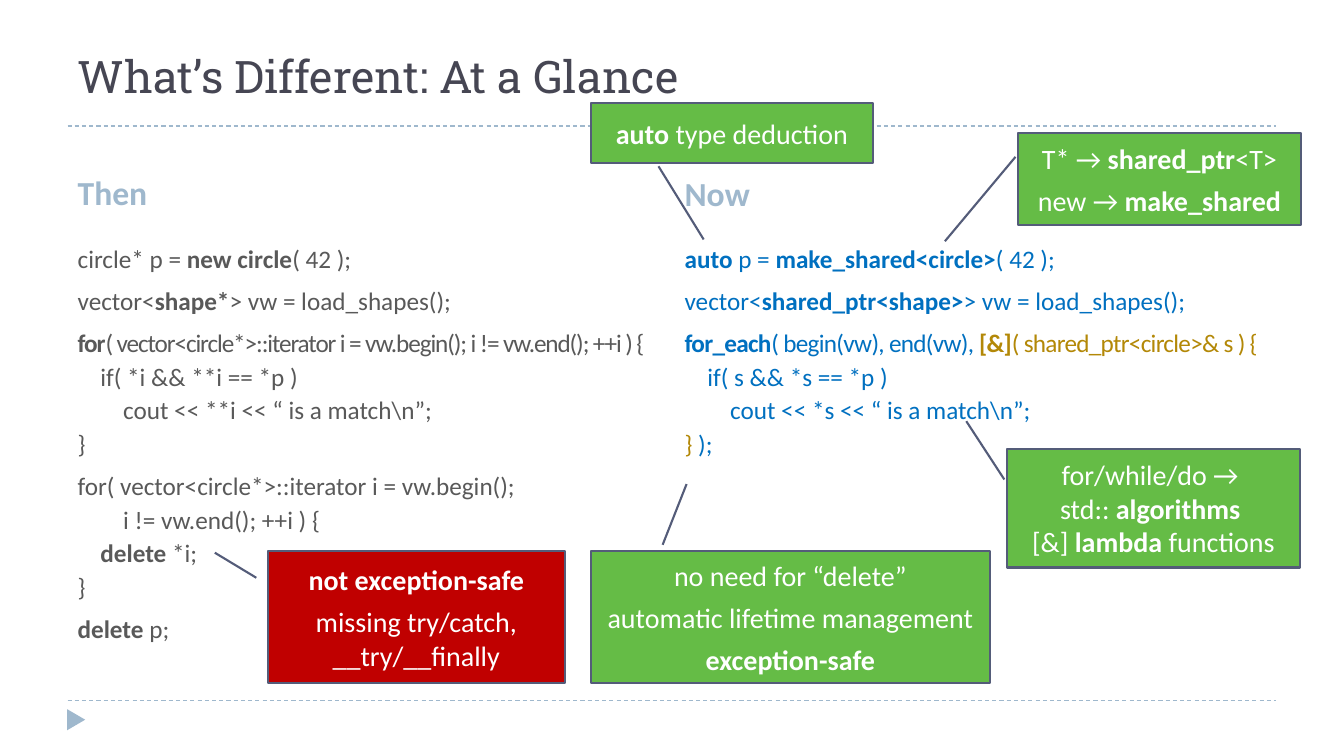
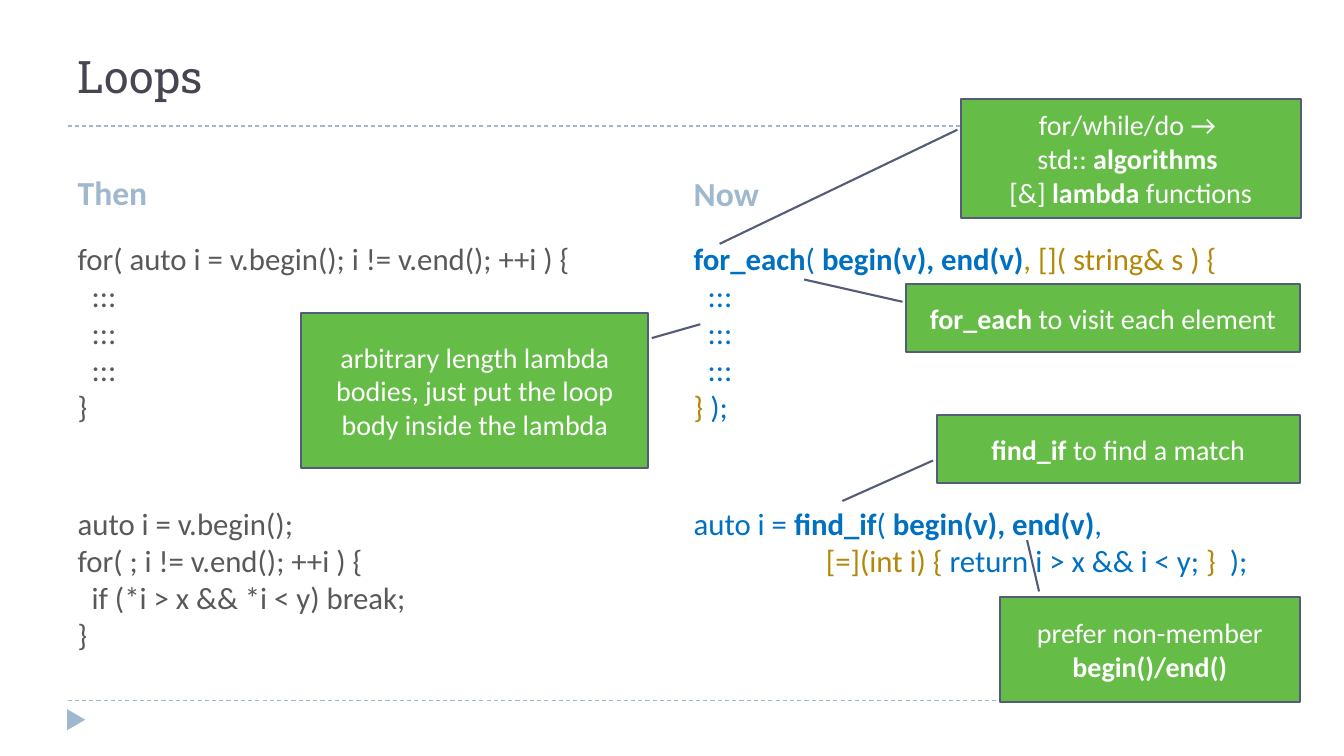
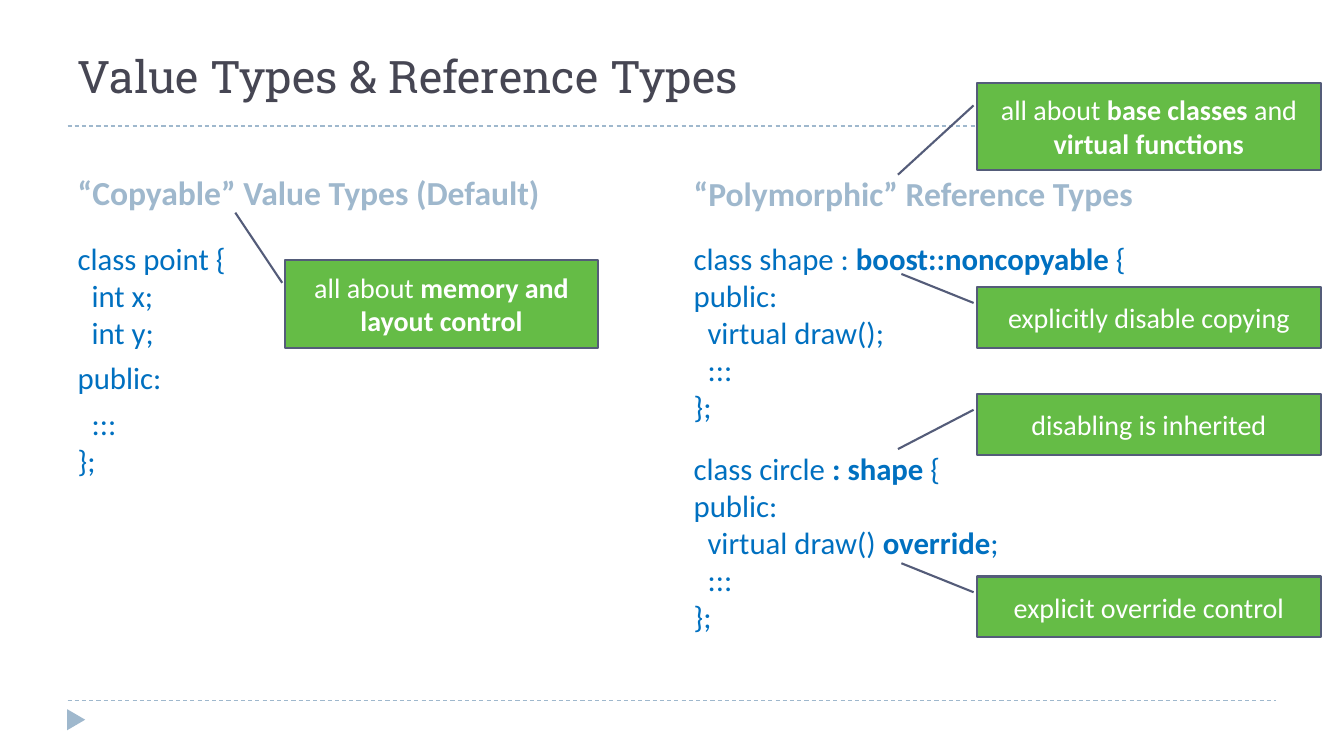
from dataclasses import dataclass

from lxml import etree
from pptx import Presentation
from pptx import util as u
from pptx.dml.color import RGBColor
from pptx.enum import dml, shapes, text


# Theme: colours, fonts and type sizes
@dataclass(frozen=True)
class Theme:
    title: str = "464653"
    pale: str = "9FB8CD"
    gray: str = "595959"
    blue: str = "0070C0"
    gold: str = "B38807"
    green: str = "65BC46"
    red: str = "C00000"
    edge: str = "545C79"
    white: str = "FFFFFF"
    head: str = "Roboto Slab"
    body: str = "Calibri"
    big: int = 32
    mid: int = 24
    code: int = 22
    note: int = 20
    small: int = 18


T = Theme()
A = "http://schemas.openxmlformats.org/drawingml/2006/main"
SPACE = 0.226  # width of a space, in ems
LEFT, RIGHT, WIDE = 0.67, 6.78, 5.89


# Runs and rows of text
@dataclass(frozen=True)
class Run:
    text: str
    bold: bool = False
    ink: str = ""


@dataclass(frozen=True)
class Row:
    runs: tuple
    gap: float
    pad: int
    spc: int


def row(*runs, gap=0, pad=0, spc=0):
    """One line of text; pad counts spaces of indent."""
    return Row(runs, gap, pad, spc)


def para(*runs, **more):
    return row(*runs, gap=6, **more)


def b(words):
    return Run(words, bold=True)


def gold(words, bold=False):
    return Run(words, bold, T.gold)


def rgb(code):
    return RGBColor.from_string(code)


def place(shape, box):
    shape.left, shape.top, shape.width, shape.height = map(u.Inches, box)


def fill(frame, rows, size, ink, align=None, lead=None):
    frame.word_wrap = True
    for i, line in enumerate(rows):
        p = frame.add_paragraph() if i else frame.paragraphs[0]
        p.alignment = align
        p.space_before = u.Pt(line.gap)
        if lead:
            p.line_spacing = u.Pt(lead)
        if line.pad:
            p._p.get_or_add_pPr().set(
                "marL", str(u.Pt(line.pad * size * SPACE)))
        for part in line.runs:
            part = Run(part) if isinstance(part, str) else part
            r = p.add_run()
            r.text = part.text
            r.font.name, r.font.size = T.body, u.Pt(size)
            r.font.bold = part.bold
            r.font.color.rgb = rgb(part.ink or ink)
            if line.spc:
                r.font._element.set("spc", str(line.spc))


# Shared layout: placeholders, rules and corner mark
def style(holder, box, anchor, font, size, ink, bold=0, gap=0):
    place(holder, box)
    frame = holder.text_frame
    frame.vertical_anchor = anchor
    frame.auto_size = text.MSO_AUTO_SIZE.NONE
    old = holder.element.find(".//{%s}lstStyle" % A)
    new = etree.fromstring(
        f'<a:lvl1pPr xmlns:a="{A}" marL="0" indent="0" algn="l">'
        f'<a:spcBef><a:spcPts val="{gap * 100}"/></a:spcBef><a:buNone/>'
        f'<a:defRPr sz="{size * 100}" b="{bold}">'
        f'<a:solidFill><a:srgbClr val="{ink}"/></a:solidFill>'
        f'<a:latin typeface="{font}"/></a:defRPr></a:lvl1pPr>')
    first = old.find("{%s}lvl1pPr" % A)
    if first is not None:
        old.remove(first)
    old.insert(0, new)


def rule(slide, y):
    line = slide.shapes.add_connector(
        shapes.MSO_CONNECTOR.STRAIGHT,
        *map(u.Inches, (LEFT, y, 12.66, y)))
    line.line.color.rgb = rgb(T.pale)
    line.line.width = u.Pt(0.75)
    line.line.dash_style = dml.MSO_LINE.DASH
    etree.SubElement(line.element.spPr, "{%s}effectLst" % A)
    return line


def mark(slide):
    tri = slide.shapes.add_shape(
        shapes.MSO_SHAPE.ISOSCELES_TRIANGLE,
        *map(u.Inches, (0.65, 7.05, 0.21, 0.18)))
    tri.rotation = 90
    tri.shadow.inherit = False
    tri.fill.solid()
    tri.fill.fore_color.rgb = rgb(T.pale)
    tri.line.fill.background()
    return tri


def setup(layout):
    mid, low, top = (text.MSO_ANCHOR.MIDDLE, text.MSO_ANCHOR.BOTTOM,
                     text.MSO_ANCHOR.TOP)
    get = layout.placeholders.get
    style(get(0), (LEFT, 0.25, 12, 1), mid, T.head, T.big, T.title)
    for i, x, y in ((1, LEFT, 1.41), (3, RIGHT, 1.42)):
        style(get(i), (x, y, WIDE, 0.75), low, T.body, T.mid, T.pale, 1, 6)
        style(get(i + 1), (x, 2.33, WIDE, 4.6), top, T.body, T.code, T.gray)


def dress(slide, layout):
    """Draw the shared parts and move them to the layout."""
    parts = [rule(slide, 6.95), rule(slide, 1.25), mark(slide)]
    for i, part in enumerate(parts, 20):
        part.element.xpath(".//p:cNvPr")[0].set("id", str(i))
        layout.shapes.element.append(part.element)


# Slide regions
def start(deck, layout, title, left, right):
    slide = deck.slides.add_slide(layout)
    for i, words in ((0, title), (1, left), (3, right)):
        slide.placeholders[i].text_frame.text = words
    return slide


def code(slide, idx, rows, ink, size=T.code, lead=None):
    fill(slide.placeholders[idx].text_frame, rows, size, ink, lead=lead)


def note(slide, box, tip, *rows, root=(0.26, -0.01), color=T.green):
    """Callout; root and tip are (y, x) shares of the box."""
    shape = slide.shapes.add_shape(
        shapes.MSO_SHAPE.LINE_CALLOUT_1, *map(u.Inches, box))
    for i, share in enumerate(root + tip):
        shape.adjustments[i] = share
    shape.shadow.inherit = False
    shape.fill.solid()
    shape.fill.fore_color.rgb = rgb(color)
    shape.line.color.rgb = rgb(T.edge)
    shape.line.width = u.Pt(1.5)
    shape.text_frame.vertical_anchor = text.MSO_ANCHOR.MIDDLE
    fill(shape.text_frame, rows, T.note, T.white, text.PP_ALIGN.CENTER)


ALGO = (
    para("for/while/do → "),
    row("std:: ", b("algorithms ")),
    row("[&] ", b("lambda"), " functions"),
)
DOTS = row(":::", pad=2)


# Slide 1
def glance(deck, layout):
    slide = start(deck, layout, "What’s Different: At a Glance",
                  "Then", "Now")
    dress(slide, layout)
    place(slide.placeholders[3], (6.69, 1.42, 6.07, 0.75))
    place(slide.placeholders[4], (6.69, 2.33, 6.07, 3.11))
    code(slide, 2, (
        para("circle* p = ", b("new circle"), "( 42 );"),
        para("vector<", b("shape*"), "> vw = load_shapes();"),
        para(b("for"), "( vector<circle*>::iterator i = vw.begin(); "
             "i != vw.end(); ++i ) {", spc=-80),
        row("if( *i && **i == *p )", pad=4),
        row("cout << **i << “ is a match\\n”;", pad=8),
        row("}"),
        para("for( vector<circle*>::iterator i = vw.begin();"),
        row("i != vw.end(); ++i ) {", pad=8),
        row(b("delete"), " *i;", pad=4),
        row("}"),
        para(b("delete"), " p;"),
    ), T.gray, T.small, 24)
    code(slide, 4, (
        para(b("auto"), " p = ", b("make_shared<circle>"), "( 42 );"),
        para("vector<", b("shared_ptr<shape>"), "> vw = load_shapes();"),
        para(b("for_each"), "( begin(vw), end(vw), ", gold("[&]", True),
             gold("( shared_ptr<circle>& s ) {"), spc=-50),
        row("if( s && *s == *p )", pad=4),
        row("cout << *s << “ is a match\\n”;", pad=8),
        row(gold("}"), " );"),
    ), T.blue, T.small, 24)
    note(slide, (10.1, 1.32, 2.8, 0.91), (1.18, -0.26),
         para("T* → ", b("shared_ptr"), "<T>"),
         para("new → ", b("make_shared")))
    note(slide, (5.86, 5.47, 3.96, 1.31), (-0.51, 0.24),
         para("no need for “delete”"),
         para("automatic lifetime management"),
         para(b("exception-safe")), root=(-0.05, 0.18))
    note(slide, (9.99, 4.45, 2.9, 1.18), (-0.23, -0.14), *ALGO)
    note(slide, (5.86, 1.02, 2.8, 0.6), (2.26, 0.4),
         para(b("auto"), " type deduction"), root=(1.05, 0.24))
    note(slide, (2.66, 5.47, 2.94, 1.31), (0.01, -0.18),
         para(b("not exception-safe")),
         para("missing try/catch, __try/__finally"),
         root=(0.2, -0.04), color=T.red)


# Slide 2
def loops(deck, layout):
    slide = start(deck, layout, "Loops", "Then", "Now")
    code(slide, 2, (
        para("for( auto i = v.begin(); i != v.end(); ++i ) {"),
        DOTS, DOTS, DOTS,
        row("}"),
        row("auto i = v.begin();", gap=57),
        row("for( ; i != v.end(); ++i ) {"),
        row("if (*i > x && *i < y) break;", pad=2),
        row("}"),
    ), T.gray)
    code(slide, 4, (
        para(b("for_each"), "( ", b("begin(v), end(v)"),
             gold(", []( string& s ) {")),
        DOTS, DOTS, DOTS,
        row(gold("} "), ");"),
        row("auto i = ", b("find_if"), "( ", b("begin(v), end(v)"), ",",
            gap=57),
        row(gold("[=](int i) {"), " return i > x && i < y; ", gold("}"),
            "  );", pad=19),
    ), T.blue)
    note(slide, (9.53, 0.98, 3.37, 1.18), (1.22, -0.71), *ALGO)
    note(slide, (8.99, 2.82, 3.9, 0.67), (-0.07, -0.26),
         para(b("for_each "), "to visit each element"))
    note(slide, (9.29, 4.12, 3.6, 0.67), (1.27, -0.26),
         para(b("find_if "), "to find a match"), root=(0.67, -0.01))
    note(slide, (9.92, 5.92, 2.97, 1.04), (-0.54, 0.09),
         para("prefer non-member", b(" begin()/end()")),
         root=(-0.05, 0.13))
    note(slide, (2.99, 3.11, 3.44, 1.53), (0.07, 1.15),
         para("arbitrary length lambda bodies, just put the loop body "
              "inside the lambda"), root=(0.16, 1.01))


# Slide 3
def types(deck, layout):
    slide = start(deck, layout, "Value Types & Reference Types",
                  "“Copyable” Value Types (Default)",
                  "“Polymorphic” Reference Types")
    code(slide, 2, (
        para("class point {"),
        row("int x;", pad=2),
        row("int y;", pad=2),
        para("public:"),
        para(":::", pad=2),
        row("};"),
    ), T.blue)
    code(slide, 4, (
        para("class shape : ", b("boost::noncopyable"), " {"),
        row("public:"),
        row("virtual draw();", pad=2),
        DOTS,
        row("};"),
        row("class circle ", b(": shape "), "{", gap=18),
        row("public:"),
        row("virtual draw() ", b("override"), ";", pad=2),
        DOTS,
        row("};"),
    ), T.blue)
    note(slide, (9.69, 0.82, 3.41, 0.87), (1.05, -0.23),
         para("all about ", b("base classes"), " and ",
              b("virtual functions")))
    note(slide, (2.83, 2.58, 3.1, 0.87), (-0.54, -0.16),
         para("all about ", b("memory and layout control")))
    for y, tip, words in (
        (2.85, (-0.22, -0.22), "explicitly disable copying"),
        (3.91, (0.91, -0.23), "disabling is inherited"),
        (5.72, (-0.22, -0.22), "explicit override control"),
    ):
        note(slide, (9.69, y, 3.41, 0.6), tip, para(words))


def main():
    deck = Presentation()
    deck.slide_width, deck.slide_height = u.Inches(13.33), u.Inches(7.5)
    layout = deck.slide_layouts.get_by_name("Comparison")
    setup(layout)
    for build in (glance, loops, types):
        build(deck, layout)
    deck.save("out.pptx")


if __name__ == "__main__":
    main()
